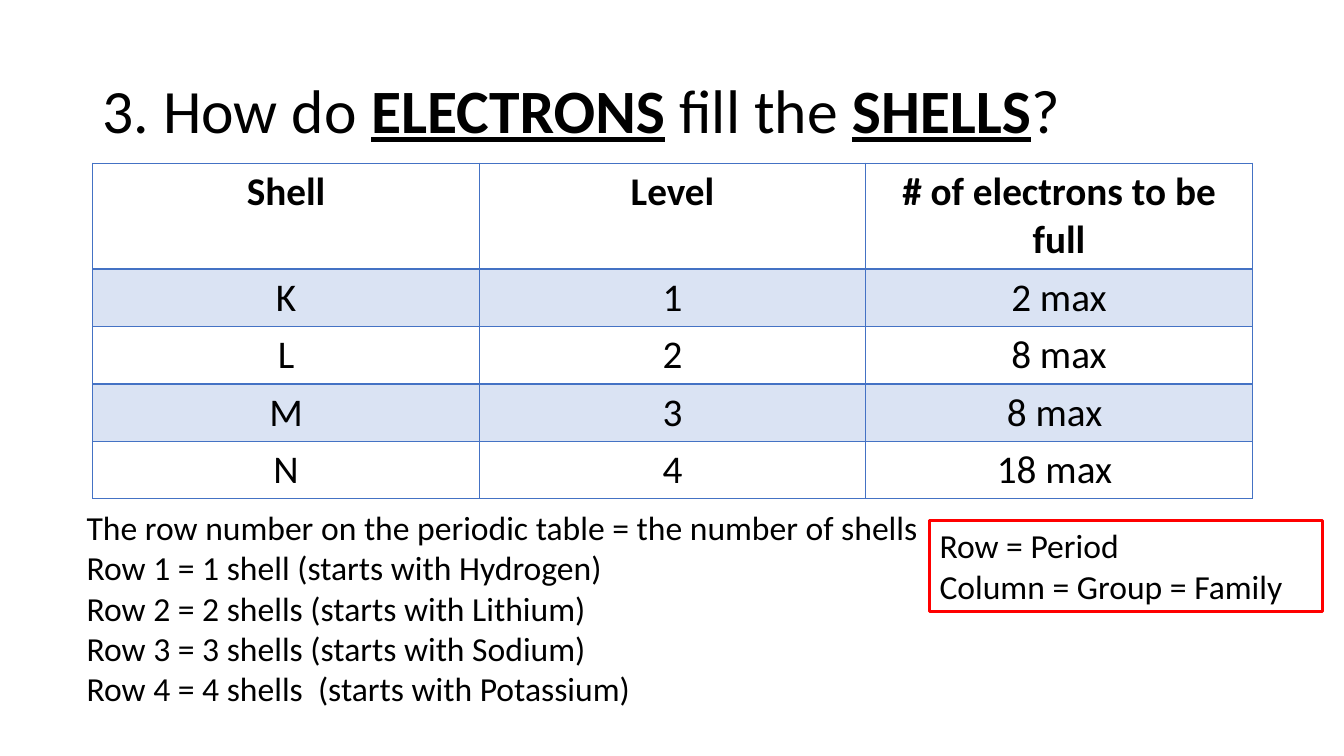
from lxml import etree
from pptx import Presentation, util as u
from pptx.dml.color import RGBColor
from pptx.enum import shapes, text
from pptx.oxml.ns import qn

TITLE = [
    ("3. How do ", False),
    ("ELECTRONS", True),
    (" fill the ", False),
    ("SHELLS", True),
    ("?", False),
]
SHELLS = [
    ("Shell", "Level", "# of electrons to be full"),
    ("K", "1", "2 max"),
    ("L", "2", "8 max"),
    ("M", "3", "8 max "),
    ("N", "4", "18 max "),
]
PERIODIC_ROWS = [
    "The row number on the periodic table = the number of shells",
    "Row 1 = 1 shell (starts with Hydrogen)",
    "Row 2 = 2 shells (starts with Lithium)",
    "Row 3 = 3 shells (starts with Sodium)",
    "Row 4 = 4 shells  (starts with Potassium)",
]
DEFINITIONS = ["Row = Period", "Column = Group = Family"]

THEME = {
    "font": "Calibri",
    "ink": "000000",
    "border": "4472C4",
    "band": "DAE3F3",
    "frame": "FF0000",
    "title": 44,
    "table": 28,
    "body": 24,
}
LEFT, TABLE_TOP, CONTENT_WIDTH = 0.92, 1.62, 11.5
HEADER_HEIGHT, ROW_HEIGHT = 1.05, 0.57


def style_run(run, size, bold=False, underline=False):
    run.font.name = THEME["font"]
    run.font.size = u.Pt(size)
    run.font.color.rgb = RGBColor.from_string(THEME["ink"])
    run.font.bold = bold
    run.font.underline = underline


def write_lines(text_frame, lines):
    text_frame.word_wrap = True
    text_frame.text = "\n".join(lines)
    for paragraph in text_frame.paragraphs:
        paragraph.alignment = text.PP_ALIGN.LEFT
        for run in paragraph.runs:
            style_run(run, THEME["body"])


def add_text_box(slide, left, top, width, height):
    return slide.shapes.add_textbox(*map(u.Inches, (left, top, width, height)))


def set_borders(cell, widths):
    properties = cell._tc.get_or_add_tcPr()
    for position, (side, width) in enumerate(widths.items()):
        line = etree.Element(qn(f"a:{side}"), w=str(u.Pt(width)))
        fill = etree.SubElement(line, qn("a:solidFill"))
        etree.SubElement(fill, qn("a:srgbClr"), val=THEME["border"])
        properties.insert(position, line)


def add_title(slide):
    title = add_text_box(slide, LEFT, 0.4, CONTENT_WIDTH, 1.45)
    title.text_frame.word_wrap = True
    title.text_frame.vertical_anchor = text.MSO_ANCHOR.MIDDLE
    paragraph = title.text_frame.paragraphs[0]
    paragraph.line_spacing = 0.9
    for words, emphasis in TITLE:
        run = paragraph.add_run()
        run.text = words
        style_run(run, THEME["title"], emphasis, emphasis)


def add_shell_table(slide):
    row_count, column_count = len(SHELLS), len(SHELLS[0])
    height = HEADER_HEIGHT + ROW_HEIGHT * (row_count - 1)
    frame = slide.shapes.add_table(
        row_count, column_count, u.Inches(LEFT), u.Inches(TABLE_TOP),
        u.Inches(CONTENT_WIDTH), u.Inches(height))
    table = frame.table
    for row_index, values in enumerate(SHELLS):
        header = row_index == 0
        table.rows[row_index].height = u.Inches(HEADER_HEIGHT if header else ROW_HEIGHT)
        borders = {"lnL": 1, "lnR": 1, "lnT": 2 if row_index == 1 else 1,
                   "lnB": 2 if header else 1}
        for column_index, value in enumerate(values):
            cell = table.cell(row_index, column_index)
            cell.text = value
            paragraph = cell.text_frame.paragraphs[0]
            paragraph.alignment = text.PP_ALIGN.CENTER
            style_run(paragraph.runs[0], THEME["table"], header)
            if row_index % 2:
                cell.fill.solid()
                cell.fill.fore_color.rgb = RGBColor.from_string(THEME["band"])
            else:
                cell.fill.background()
            set_borders(cell, borders)


def add_definitions(slide):
    box = slide.shapes.add_shape(
        shapes.MSO_SHAPE.RECTANGLE, *map(u.Inches, (9.22, 5.16, 3.9, 0.91)))
    box.shadow.inherit = False
    box.fill.background()
    box.line.color.rgb = RGBColor.from_string(THEME["frame"])
    box.line.width = u.Pt(2)
    box.text_frame.vertical_anchor = text.MSO_ANCHOR.TOP
    write_lines(box.text_frame, DEFINITIONS)


def main():
    presentation = Presentation()
    presentation.slide_width = u.Inches(13.33)
    presentation.slide_height = u.Inches(7.5)
    slide = presentation.slides.add_slide(presentation.slide_layouts[6])
    add_title(slide)
    add_shell_table(slide)
    write_lines(add_text_box(slide, 0.76, 4.98, 9.62, 2.12).text_frame, PERIODIC_ROWS)
    add_definitions(slide)
    presentation.save("out.pptx")


if __name__ == "__main__":
    main()
